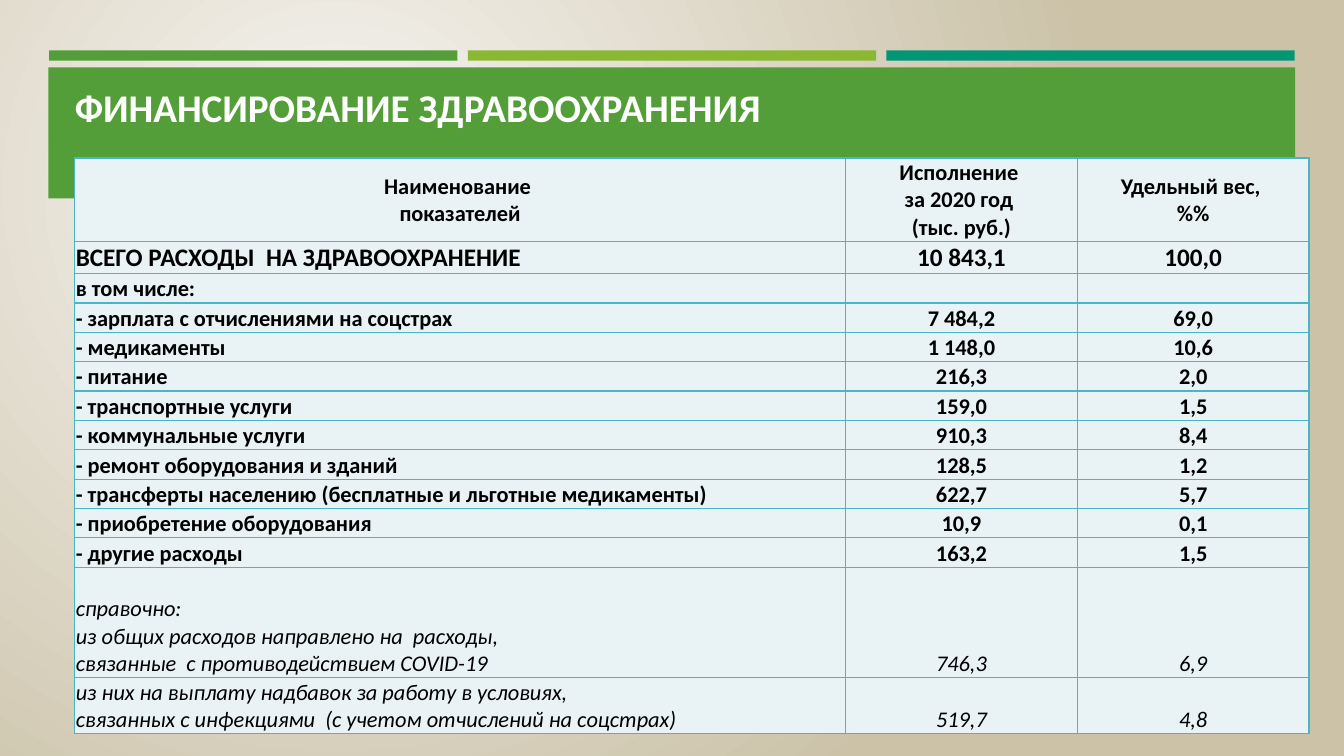
from lxml.etree import SubElement
from pptx import Presentation
from pptx.dml.color import RGBColor
from pptx.enum.shapes import MSO_SHAPE
from pptx.enum.text import MSO_ANCHOR, MSO_AUTO_SIZE, PP_ALIGN
from pptx.oxml import parse_xml
from pptx.oxml.ns import nsdecls, qn
from pptx.util import Cm, Pt

FONT = "Calibri"
COLORS = {
    "green": "549E39", "lime": "8AB833", "teal": "029676",
    "light": "F7F5F2", "sand": "CBC2A8", "cell": "E9F3F5",
    "border": "4AB5C4", "white": "FFFFFF", "black": "000000",
}
HEADER = ["Наименование \nпоказателей", "Исполнение \nза 2020 год \n(тыс. руб.)", "Удельный вес, \n%%"]
TOTAL = ["ВСЕГО РАСХОДЫ  НА ЗДРАВООХРАНЕНИЕ", "10 843,1", "100,0"]
ITEMS = [
    ["- зарплата с отчислениями на соцстрах", "7 484,2", "69,0"],
    ["- медикаменты", "1 148,0", "10,6"],
    ["- питание", "216,3", "2,0"],
    ["- транспортные услуги", "159,0", "1,5"],
    ["- коммунальные услуги", "910,3", "8,4"],
    ["- ремонт оборудования и зданий", "128,5", "1,2"],
    ["- трансферты населению (бесплатные и льготные медикаменты)", "622,7", "5,7"],
    ["- приобретение оборудования", "10,9", "0,1"],
    ["- другие расходы", "163,2", "1,5"],
]
NOTES = [
    ["справочно:\nиз общих расходов направлено на  расходы,\nсвязанные  с противодействием COVID-19", "746,3", "6,9"],
    ["из них на выплату надбавок за работу в условиях,\n"
     "связанных с инфекциями  (с учетом отчислений на соцстрах)", "519,7", "4,8"],
]
ROWS = [HEADER, TOTAL, ["в том числе:", "", ""], *ITEMS, *NOTES]
ROW_HEIGHTS = [2.08, 0.81, 0.7] + [0.74] * len(ITEMS) + [2.78, 1.4]
COLUMN_WIDTHS = [19.43, 5.84, 5.84]


def add_span(para, text, size, color, bold=True, italic=False):
    span = para.add_run()
    span.text = text
    span.font.name = FONT
    span.font.size = Pt(size)
    span.font.bold = bold
    span.font.italic = italic
    span.font.color.rgb = RGBColor.from_string(COLORS[color])


deck = Presentation()
deck.slide_width, deck.slide_height = Cm(33.87), Cm(19.05)
page = deck.slides.add_slide(deck.slide_layouts[5])

# Background: radial gradient
background = page.background.fill
background.gradient()
for stop, name in zip(background.gradient_stops, ["light", "sand"]):
    stop.color.rgb = RGBColor.from_string(COLORS[name])
for position, stop in enumerate(background.gradient_stops):
    stop.position = position
gradient = page.element.find(".//" + qn("a:gradFill"))
gradient.replace(gradient.find(qn("a:lin")), parse_xml(
    f'<a:path {nsdecls("a")} path="circle">'
    '<a:fillToRect l="50000" t="50000" r="100000" b="100000"/></a:path>'))

# Three stripes above the title banner
stripes = [(1.24 + 10.55 * i, 1.27, 10.29, 0.26, name)
           for i, name in enumerate(["green", "lime", "teal"])]
for left, top, width, height, name in [*stripes, (1.22, 1.7, 31.42, 3.3, "green")]:
    bar = page.shapes.add_shape(MSO_SHAPE.RECTANGLE, Cm(left), Cm(top), Cm(width), Cm(height))
    bar.shadow.inherit = False
    bar.fill.solid()
    bar.fill.fore_color.rgb = RGBColor.from_string(COLORS[name])
    bar.line.fill.background()

# Title, brought in front of the banner
title = page.shapes.title
title.left, title.top, title.width, title.height = Cm(1.63), Cm(1.96), Cm(30.63), Cm(2.82)
title.text_frame.word_wrap = True
title.text_frame.auto_size = MSO_AUTO_SIZE.NONE
title.text_frame.vertical_anchor = MSO_ANCHOR.TOP
title_para = title.text_frame.paragraphs[0]
title_para.alignment = PP_ALIGN.LEFT
add_span(title_para, "ФИНАНСИРОВАНИЕ ЗДРАВООХРАНЕНИЯ", 28, "white")
page.shapes.element.append(title.element)

# Spending table
table = page.shapes.add_table(
    len(ROWS), len(COLUMN_WIDTHS), Cm(1.88), Cm(3.98),
    Cm(sum(COLUMN_WIDTHS)), Cm(sum(ROW_HEIGHTS))).table
table.first_row = table.horz_banding = False
for column, width in zip(table.columns, COLUMN_WIDTHS):
    column.width = Cm(width)
for row, height in zip(table.rows, ROW_HEIGHTS):
    row.height = Cm(height)

for row_index, texts in enumerate(ROWS):
    is_header = texts is HEADER
    is_note = texts in NOTES
    for column_index, text in enumerate(texts):
        cell = table.cell(row_index, column_index)
        cell.margin_left = cell.margin_right = cell.margin_top = Cm(0.03)
        cell.margin_bottom = 0
        cell.vertical_anchor = MSO_ANCHOR.MIDDLE if is_header else MSO_ANCHOR.BOTTOM
        for line_index, line in enumerate(text.split("\n")):
            frame = cell.text_frame
            para = frame.add_paragraph() if line_index else frame.paragraphs[0]
            para.alignment = PP_ALIGN.CENTER if is_header or column_index else PP_ALIGN.LEFT
            add_span(para, line, 18 if texts is TOTAL else 16, "black", not is_note, is_note)
        properties = cell._tc.get_or_add_tcPr()
        for side in "LRTB":
            border = SubElement(properties, qn(f"a:ln{side}"), w=str(Pt(1)))
            paint = SubElement(border, qn("a:solidFill"))
            SubElement(paint, qn("a:srgbClr"), val=COLORS["border"])
        cell.fill.solid()
        cell.fill.fore_color.rgb = RGBColor.from_string(COLORS["cell"])

deck.save("out.pptx")
